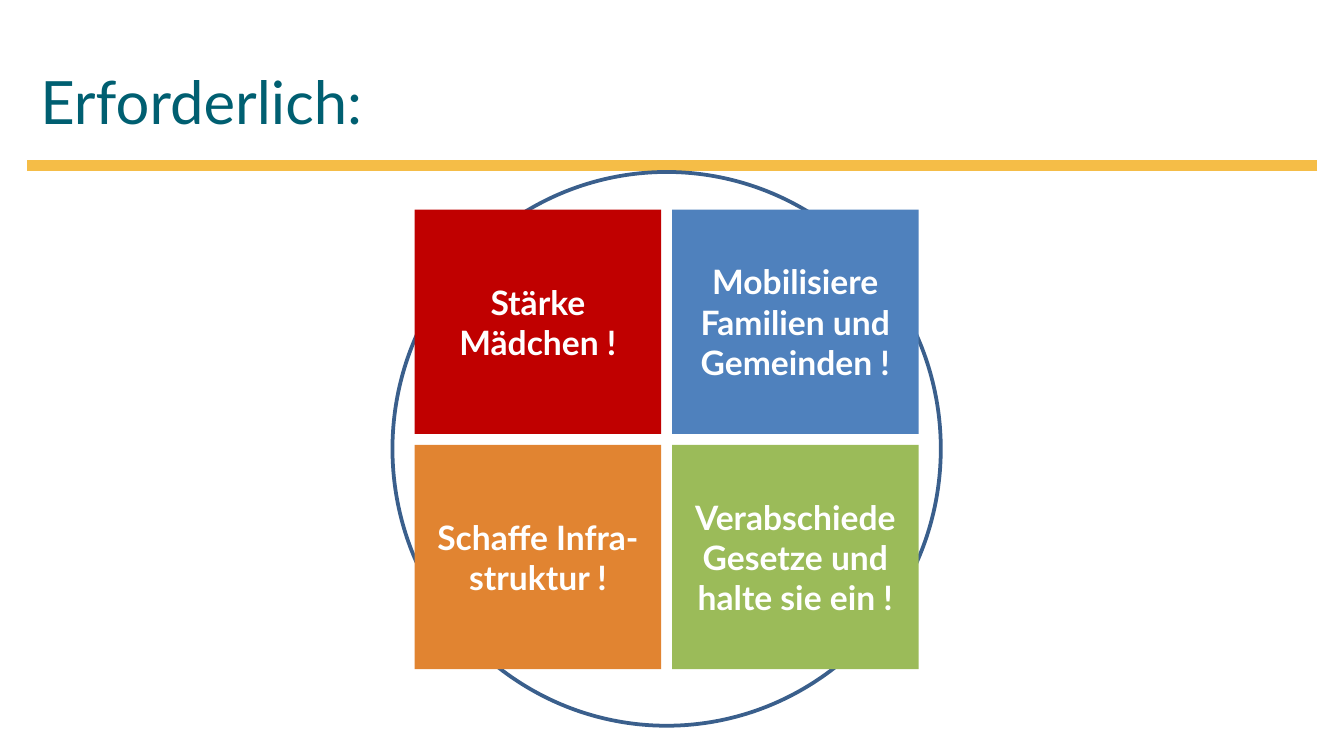
from lxml.etree import SubElement
from pptx import Presentation
from pptx.dml.color import RGBColor
from pptx.enum.shapes import MSO_CONNECTOR, MSO_SHAPE
from pptx.enum.text import MSO_ANCHOR as ANCHOR, PP_ALIGN as ALIGN
from pptx.oxml.ns import qn
from pptx.util import Emu, Pt

PX = 4572
FONT = "Lato"
COLORS = {
    "title": "005F71", "rule": "F5BD47", "ring": "3A5F8C", "text": "FFFFFF",
    "red": "C00000", "blue": "4F81BD", "orange": "E18431", "green": "9BBB59",
}
TILES = [
    [("red", "Stärke Mädchen !"), ("blue", "Mobilisiere Familien und\nGemeinden !")],
    [("orange", "Schaffe Infra-struktur !"),
     ("green", "Verabschiede Gesetze und halte sie ein !")],
]


def px(*values):
    """Turn whole px lengths into EMU."""
    return [Emu(v * PX) for v in values]


def rgb(name):
    """Look up a named colour."""
    return RGBColor.from_string(COLORS[name])


def format_text(tf, size, color, align, anchor, bold=False):
    """Format every run of a text frame alike."""
    tf.word_wrap = True
    tf.vertical_anchor = anchor
    for p in tf.paragraphs:
        p.alignment = align
        for r in p.runs:
            r.font.name, r.font.size, r.font.bold = FONT, Pt(size), bold
            r.font.color.rgb = rgb(color)


def add_header(s, x, y, w, h):
    """Place the title at the top of the box and the rule along its bottom."""
    title = s.shapes.title
    title.left, title.top, title.width, title.height = px(x, y, w, h - 33)
    title.text_frame.text = "Erforderlich:"
    format_text(title.text_frame, 32, "title", ALIGN.LEFT, ANCHOR.BOTTOM)
    rule = s.shapes.add_connector(MSO_CONNECTOR.STRAIGHT, *px(x + w, y + h, x, y + h))
    rule.line.color.rgb = rgb("rule")
    rule.line.width = Pt(6)
    SubElement(rule._element.spPr, qn("a:effectLst"))


def add_ring(s, x, y, w, h):
    """Draw the outlined circle that fills the box."""
    sp = s.shapes.add_shape(MSO_SHAPE.FLOWCHART_CONNECTOR, *px(x, y, w, h))
    sp.shadow.inherit = False
    sp.fill.background()
    sp.line.color.rgb = rgb("ring")
    sp.line.width = Pt(2)


def add_tiles(s, x, y, w, h, gap):
    """Fill the box with a grid of coloured tiles, equally spaced."""
    tile_w = (w - gap) // 2
    tile_h = (h - gap) // 2
    for row, tiles in enumerate(TILES):
        for col, (color, text) in enumerate(tiles):
            left, top = x + col * (tile_w + gap), y + row * (tile_h + gap)
            sp = s.shapes.add_shape(MSO_SHAPE.RECTANGLE, *px(left, top, tile_w, tile_h))
            sp.shadow.inherit = False
            sp.fill.solid()
            sp.fill.fore_color.rgb = rgb(color)
            sp.line.fill.background()
            sp.text_frame.text = text
            format_text(sp.text_frame, 18, "text", ALIGN.CENTER, ANCHOR.MIDDLE, True)


def main():
    """Build and save the slide."""
    prs = Presentation()
    prs.slide_width, prs.slide_height = px(2000, 1125)
    s = prs.slides.add_slide(prs.slide_layouts[5])
    add_header(s, 40, 25, 1920, 221)
    add_ring(s, 584, 256, 816, 824)
    add_tiles(s, 617, 312, 750, 684, 16)
    prs.save("out.pptx")


if __name__ == "__main__":
    main()
